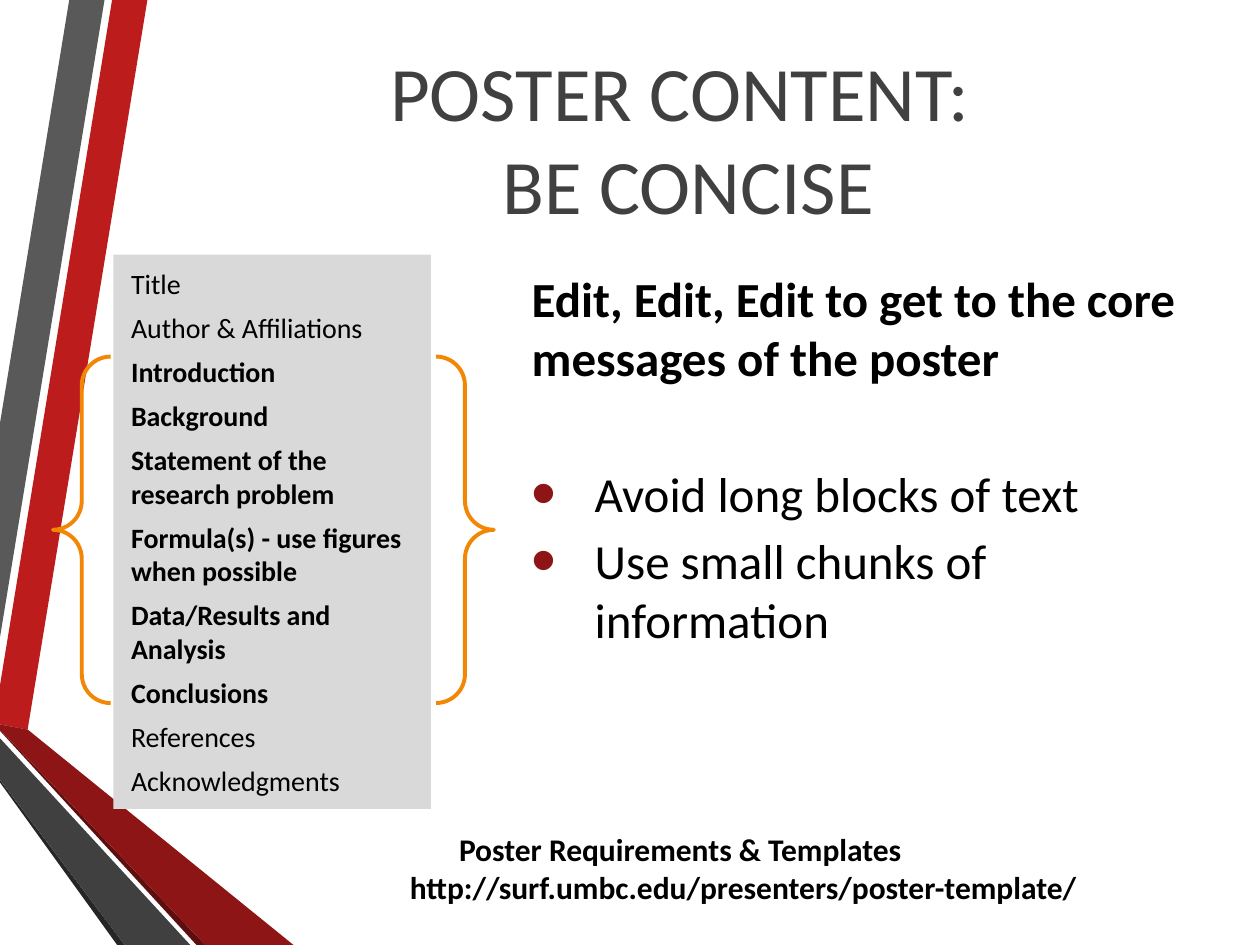
from lxml.etree import SubElement
from pptx import Presentation
from pptx.dml.color import RGBColor
from pptx.enum.shapes import MSO_SHAPE
from pptx.enum.text import MSO_ANCHOR, MSO_AUTO_SIZE, PP_ALIGN
from pptx.oxml.ns import qn
from pptx.util import Inches, Pt

WIDTH, HEIGHT = Inches(10), Inches(7.5)
COLUMNS, ROWS = 100, 75
FONT = "Calibri"

BLACK = RGBColor(0x00, 0x00, 0x00)
CHARCOAL = RGBColor(0x40, 0x40, 0x40)
GREY = RGBColor(0x59, 0x59, 0x59)
DARK_GREY = RGBColor(0x26, 0x26, 0x26)
PANEL_GREY = RGBColor(0xD9, 0xD9, 0xD9)
RED = RGBColor(0xBC, 0x1C, 0x1C)
DARK_RED = RGBColor(0x8D, 0x15, 0x15)
SHADOW_RED = RGBColor(0x5E, 0x0E, 0x0E)
ORANGE = RGBColor(0xF2, 0x87, 0x05)

RIBBONS = [
    (RED, [(0, 54.4), (0, 57.5), (2.2, 57.9), (11.7, 0), (8.9, 0)]),
    (GREY, [(8.3, 0), (5.5, 0), (0, 33.6), (0, 50.6)]),
    (DARK_GREY, [(0, 61.9), (0, 62.1), (9.3, 75), (9.9, 75)]),
    (SHADOW_RED, [(0, 57.9), (0, 58), (15.6, 75), (16.3, 75)]),
    (DARK_RED, [(0, 57.9), (16.3, 75), (23.3, 75), (2.2, 57.9), (0, 57.5)]),
    (CHARCOAL, [(0, 61.9), (9.9, 75), (15.1, 75), (0, 58.6)]),
]
SECTIONS = [
    ("Title", False),
    ("Author & Affiliations", False),
    ("Introduction", True),
    ("Background", True),
    ("Statement of the research problem", True),
    ("Formula(s) - use figures when possible", True),
    ("Data/Results and Analysis", True),
    ("Conclusions", True),
    ("References", False),
    ("Acknowledgments", False),
]
ADVICE = [
    ("Avoid long blocks of text", 44),
    ("Use small chunks of information", 5),
]


def column(count):
    return round(WIDTH * count / COLUMNS)


def row(count):
    return round(HEIGHT * count / ROWS)


def area(left, top, width, height):
    return column(left), row(top), column(width), row(height)


def place(placeholder, box, anchor):
    placeholder.left, placeholder.top, placeholder.width, placeholder.height = box
    frame = placeholder.text_frame
    frame.word_wrap = True
    frame.auto_size = MSO_AUTO_SIZE.NONE
    frame.vertical_anchor = anchor
    return frame


def next_paragraph(frame):
    first = frame.paragraphs[0]
    return frame.add_paragraph() if first.runs else first


def add_run(paragraph, text, size, color=BLACK, bold=False):
    run = paragraph.add_run()
    run.text = text
    run.font.name = FONT
    run.font.size = Pt(size)
    run.font.bold = bold
    run.font.color.rgb = color


def set_indent(paragraph, margin, hanging=0):
    properties = paragraph._p.get_or_add_pPr()
    properties.set("marL", str(column(margin)))
    properties.set("indent", str(-column(hanging)))
    return properties


def add_plain(frame, text, size, bold, before=0):
    paragraph = next_paragraph(frame)
    paragraph.space_before = Pt(before)
    SubElement(set_indent(paragraph, 0.4), qn("a:buNone"))
    add_run(paragraph, text, size, bold=bold)


def add_bullet(frame, text, size, before):
    paragraph = next_paragraph(frame)
    paragraph.space_before = Pt(before)
    properties = set_indent(paragraph, 5.4, 5)
    bullet_color = SubElement(properties, qn("a:buClr"))
    SubElement(bullet_color, qn("a:srgbClr"), val=str(DARK_RED))
    SubElement(properties, qn("a:buSzPct"), val="145000")
    SubElement(properties, qn("a:buFont"), typeface="Arial")
    SubElement(properties, qn("a:buChar"), char="•")
    add_run(paragraph, text, size)


def add_ribbon(slide, depth, color, corners):
    points = [(column(x), row(y)) for x, y in corners]
    outline = slide.shapes.build_freeform(*points[0])
    outline.add_line_segments(points[1:], close=True)
    ribbon = outline.convert_to_shape()
    ribbon.shadow.inherit = False
    ribbon.fill.solid()
    ribbon.fill.fore_color.rgb = color
    ribbon.line.fill.background()
    slide.shapes._spTree.insert(2 + depth, ribbon._element)


def fill_title(title):
    frame = place(title, area(12.5, 1.3, 84.3, 19.2), MSO_ANCHOR.MIDDLE)
    heading = frame.paragraphs[0]
    heading.alignment = PP_ALIGN.CENTER
    add_run(heading, "POSTER CONTENT: ", 44, CHARCOAL)
    heading.add_line_break()
    add_run(heading, "BE CONCISE", 44, CHARCOAL)


def fill_sections(panel):
    frame = place(panel, area(9, 20.2, 25.2, 44), MSO_ANCHOR.MIDDLE)
    panel.fill.solid()
    panel.fill.fore_color.rgb = PANEL_GREY
    for index, (section, bold) in enumerate(SECTIONS):
        add_plain(frame, section, 16, bold, before=6 if index else 0)


def fill_advice(body):
    frame = place(body, area(40.8, 19, 55.9, 44), MSO_ANCHOR.TOP)
    frame.margin_top = row(2.3)
    add_plain(frame, "Edit, Edit, Edit to get to the core messages of the poster", 28, True)
    for advice, before in ADVICE:
        add_bullet(frame, advice, 28, before)


def add_reference(slide):
    reference = slide.shapes.add_textbox(*area(4.2, 65.4, 99.6, 7.1))
    frame = reference.text_frame
    frame.word_wrap = True
    lines = [
        ("Poster Requirements & Templates", 0),
        ("http://surf.umbc.edu/presenters/poster-template/", 10),
    ]
    for text, margin in lines:
        paragraph = next_paragraph(frame)
        paragraph.alignment = PP_ALIGN.CENTER
        set_indent(paragraph, margin)
        add_run(paragraph, text, 18, bold=True)


def add_braces(slide):
    braces = slide.shapes.add_shape(MSO_SHAPE.DOUBLE_BRACE, *area(4.2, 28.3, 35, 27.5))
    braces.shadow.inherit = False
    braces.fill.background()
    braces.line.color.rgb = ORANGE
    braces.line.width = Pt(2.25)


def main():
    deck = Presentation()
    deck.slide_width, deck.slide_height = WIDTH, HEIGHT
    slide = deck.slides.add_slide(deck.slide_layouts[3])
    for depth, (color, corners) in enumerate(RIBBONS):
        add_ribbon(slide, depth, color, corners)
    fill_title(slide.shapes.title)
    fill_sections(slide.placeholders[1])
    fill_advice(slide.placeholders[2])
    add_reference(slide)
    add_braces(slide)
    deck.save("out.pptx")


if __name__ == "__main__":
    main()
